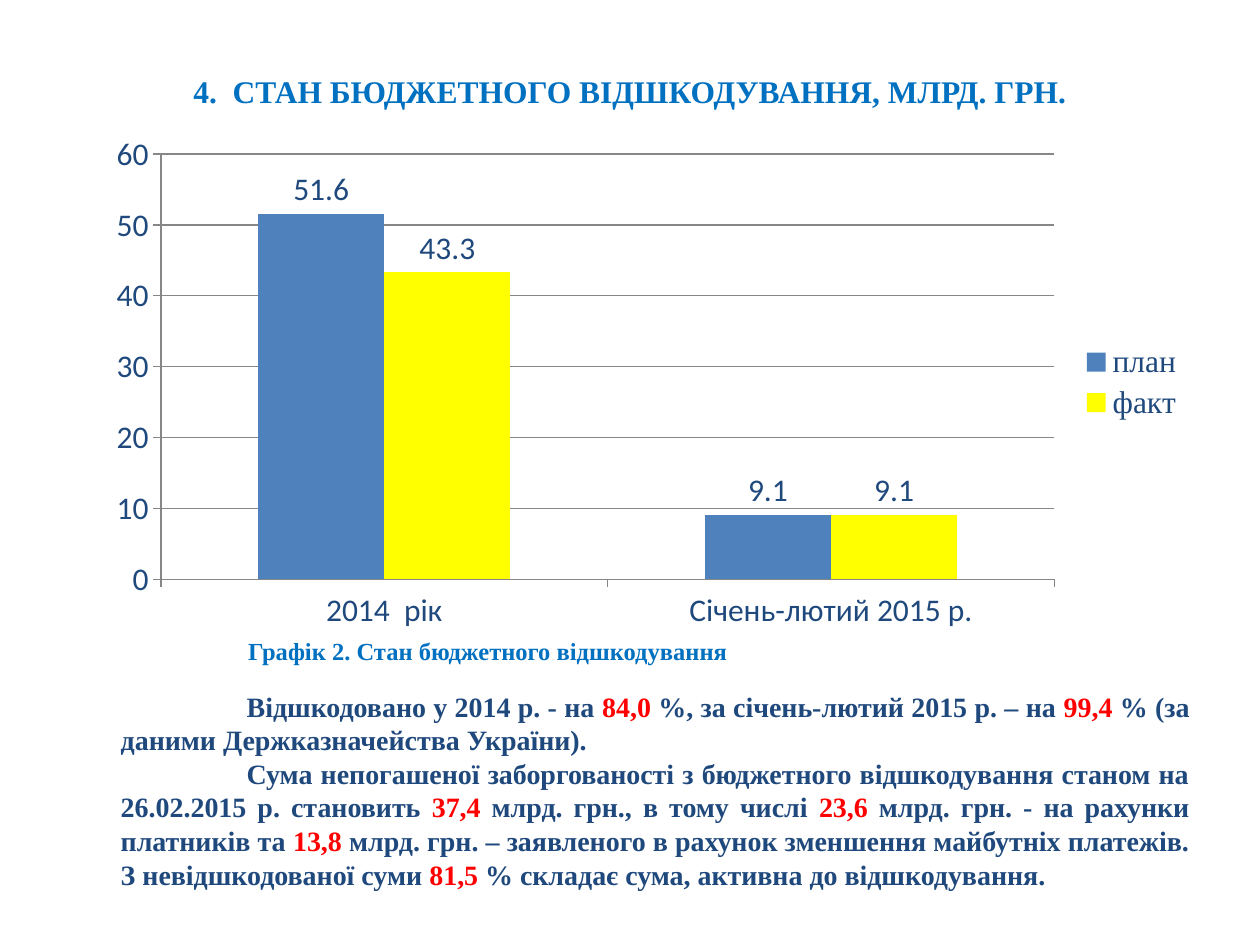
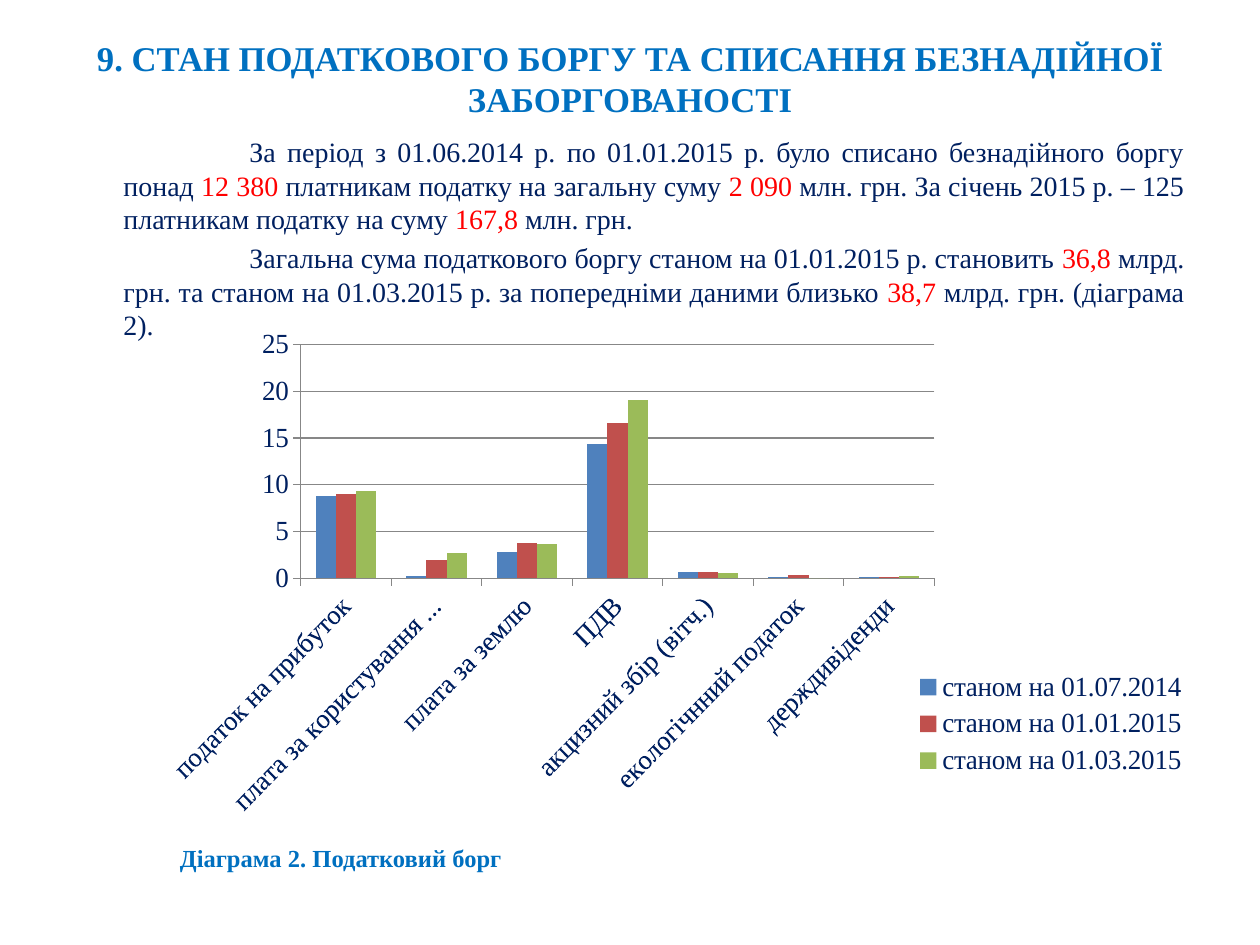
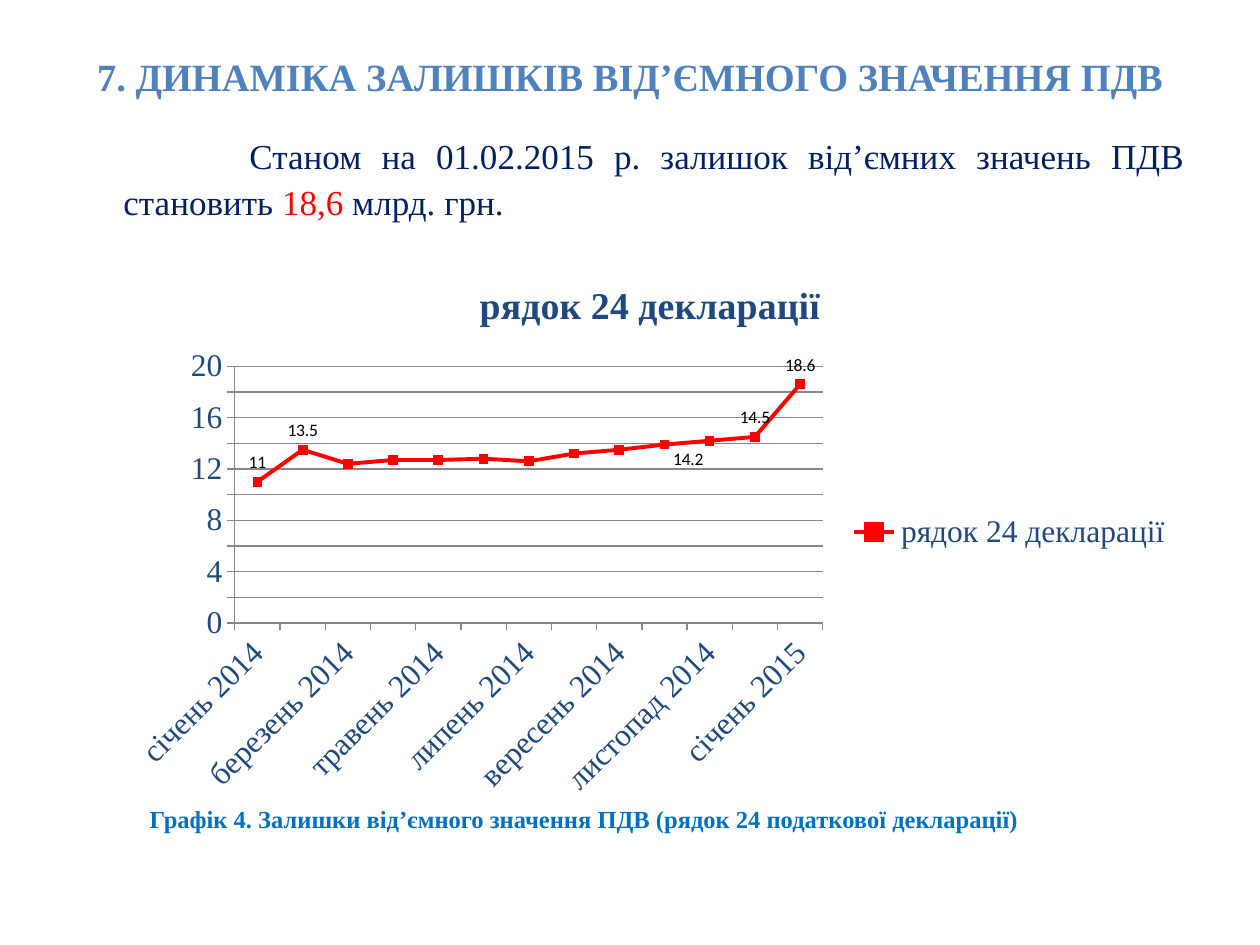
from dataclasses import dataclass

from lxml.etree import SubElement
from pptx import Presentation
from pptx.chart.data import CategoryChartData
from pptx.dml.color import RGBColor
from pptx.enum.chart import (XL_CHART_TYPE, XL_LABEL_POSITION, XL_LEGEND_POSITION,
                             XL_MARKER_STYLE, XL_TICK_MARK)
from pptx.enum.text import MSO_ANCHOR, MSO_AUTO_SIZE, PP_ALIGN
from pptx.oxml.ns import qn
from pptx.util import Inches, Pt


@dataclass(frozen=True)
class Theme:
    serif: str = "Times New Roman"
    sans: str = "Calibri"
    heading: str = "0070C0"
    navy: str = "1F497D"
    ink: str = "002060"
    accent: str = "FF0000"
    black: str = "000000"
    blue: str = "4F81BD"
    brick: str = "C0504D"
    green: str = "9BBB59"
    yellow: str = "FFFF00"
    grid: str = "878787"
    title_size: float = 18
    chart_title_size: float = 21.6
    chart_size: float = 18
    body_size: float = 16
    caption_size: float = 14
    label_size: float = 10


T = Theme()
COLUMNS, ROWS = 20, 15
TITLE_ONLY, TITLE_AND_BODY = 5, 1


def style(font, size=None, color=None, name=None, bold=None):
    if size:
        font.size = Pt(size)
    if color:
        font.color.rgb = RGBColor.from_string(color)
    if name:
        font.name = name
    if bold is not None:
        font.bold = bold


def add_run(p, text, **fmt):
    r = p.add_run()
    r.text = text
    style(r.font, **fmt)


def set_layout(parent, index, **values):
    """Give a chart part a manual layout as shares of the chart."""
    for old in parent.findall(qn("c:layout")):
        parent.remove(old)
    layout = SubElement(parent, qn("c:layout"))
    parent.insert(index, layout)
    manual = SubElement(layout, qn("c:manualLayout"))
    for tag, value in values.items():
        SubElement(manual, qn(f"c:{tag}")).set("val", str(value))


class Deck:
    def __init__(self):
        self.prs = Presentation()
        self.prs.slide_width, self.prs.slide_height = Inches(10), Inches(7.5)
        self.s = None

    def place(self, at):
        """Turn columns and rows into left, top, width, height."""
        col, row = self.prs.slide_width / COLUMNS, self.prs.slide_height / ROWS
        return [round(n * unit) for n, unit in zip(at, (col, row, col, row))]

    def move(self, sp, at):
        sp.left, sp.top, sp.width, sp.height = self.place(at)
        sp.text_frame.auto_size = MSO_AUTO_SIZE.NONE
        return sp.text_frame

    def slide(self, title, height, layout=TITLE_AND_BODY, size=T.title_size, color=T.heading):
        self.s = self.prs.slides.add_slide(self.prs.slide_layouts[layout])
        tf = self.move(self.s.shapes.title, (1, 0.6, 18, height))
        tf.vertical_anchor = MSO_ANCHOR.MIDDLE
        p = tf.paragraphs[0]
        p.alignment = PP_ALIGN.CENTER
        add_run(p, title, size=size, color=color, name=T.serif, bold=True)

    def textbox(self, at):
        tf = self.s.shapes.add_textbox(*self.place(at)).text_frame
        tf.word_wrap = True
        return tf

    def body(self, at):
        return self.move(self.s.placeholders[1], at)

    def prose(self, tf, paragraphs, margin=0.38, before=3, leading=None,
              size=T.body_size, color=T.ink, bold=False):
        """Write justified paragraphs; the parts between asterisks are accented."""
        for i, text in enumerate(paragraphs):
            p = tf.paragraphs[0] if i == 0 else tf.add_paragraph()
            p.alignment = PP_ALIGN.JUSTIFY
            p.space_before = Pt(before)
            if leading:
                p.line_spacing = Pt(leading)
            pPr = p._p.get_or_add_pPr()
            pPr.set("marL", str(Inches(margin)))
            pPr.set("indent", str(Inches(1)))
            SubElement(pPr, qn("a:buNone"))
            for j, part in enumerate(text.split("*")):
                add_run(p, part, size=size, color=T.accent if j % 2 else color,
                        name=T.serif, bold=bold)

    def caption(self, text, at):
        p = self.textbox(at).paragraphs[0]
        add_run(p, text, size=T.caption_size, color=T.heading, name=T.serif, bold=True)

    def chart(self, kind, at, cats, series, step, top, size=T.chart_size, color=T.navy,
              axis_font=T.serif, title=None):
        data = CategoryChartData()
        data.categories = cats
        for name, values in series.items():
            data.add_series(name, values)
        chart = self.s.shapes.add_chart(kind, *self.place(at), data).chart
        style(chart.font, T.chart_size, T.black, T.sans)
        chart.has_title = title is not None
        if title:
            add_run(chart.chart_title.text_frame.paragraphs[0], title,
                    size=T.chart_title_size, color=color, name=T.serif, bold=True)
        chart.has_legend = True
        chart.legend.position = XL_LEGEND_POSITION.RIGHT
        chart.legend.include_in_layout = False
        style(chart.legend.font, size, color, T.serif)
        for axis in (chart.category_axis, chart.value_axis):
            axis.major_tick_mark = XL_TICK_MARK.OUTSIDE
            style(axis.tick_labels.font, size, color, axis_font)
            self.hairline(axis.format.line)
        axis = chart.value_axis
        axis.minimum_scale, axis.maximum_scale, axis.major_unit = 0, top, step
        axis.has_major_gridlines = True
        self.hairline(axis.major_gridlines.format.line)
        chart.plots[0].vary_by_categories = False
        return chart

    def hairline(self, line):
        line.color.rgb = RGBColor.from_string(T.grid)
        line.width = Pt(0.75)

    def columns(self, *args, colors, gap=150, labels=None, **fmt):
        chart = self.chart(XL_CHART_TYPE.COLUMN_CLUSTERED, *args, **fmt)
        plot = chart.plots[0]
        plot.gap_width, plot.overlap = gap, 0
        for ser, color in zip(plot.series, colors):
            ser.format.fill.solid()
            ser.format.fill.fore_color.rgb = RGBColor.from_string(color)
            ser.invert_if_negative = False
            if labels:
                dl = ser.data_labels
                dl.show_value = True
                dl.number_format, dl.number_format_is_linked = labels, False
                dl.position = XL_LABEL_POSITION.OUTSIDE_END
                style(dl.font, T.chart_size, T.navy, T.sans)
        return chart

    def line(self, *args, color, labels, **fmt):
        chart = self.chart(XL_CHART_TYPE.LINE_MARKERS, *args, **fmt)
        ser = chart.plots[0].series[0]
        rgb = RGBColor.from_string(color)
        ser.smooth = False
        ser.format.line.color.rgb = rgb
        ser.format.line.width = Pt(2.25)
        ser.marker.style, ser.marker.size = XL_MARKER_STYLE.SQUARE, 5
        ser.marker.format.fill.solid()
        ser.marker.format.fill.fore_color.rgb = rgb
        ser.marker.format.line.color.rgb = rgb
        for i, position in labels.items():
            label = ser.points[i].data_label
            style(label.font, T.label_size, T.black)
            label.position = position
        return chart


def refund_slide(deck):
    deck.slide("4.  СТАН БЮДЖЕТНОГО ВІДШКОДУВАННЯ, МЛРД. ГРН.", 1.7, layout=TITLE_ONLY)
    deck.columns((1.5, 1.98, 17.5, 8.18), ["2014  рік", "Січень-лютий 2015 р."],
                 {"план": [51.6, 9.1], "факт": [43.3, 9.1]}, 10, 60,
                 colors=(T.blue, T.yellow), gap=154, labels="#,##0.0", axis_font=T.sans)
    deck.prose(deck.textbox((1.72, 10.84, 17.36, 3.5)), [
        "Відшкодовано у 2014 р. - на *84,0 *%, за січень-лютий 2015 р. – на *99,4* % "
        "(за даними Держказначейства України).",
        "Сума непогашеної заборгованості з бюджетного відшкодування станом на 26.02.2015 р. "
        "становить *37,4* млрд. грн., в тому числі *23,6* млрд. грн. - на рахунки платників "
        "та *13,8* млрд. грн. – заявленого в рахунок зменшення майбутніх платежів. "
        "З невідшкодованої суми *81,5* % складає сума, активна до відшкодування.",
    ], margin=0, before=0, color=T.navy, bold=True)
    deck.caption("Графік 2. Стан бюджетного відшкодування", (3.74, 10, 15.16, 0.68))


def debt_slide(deck):
    deck.slide("9. СТАН ПОДАТКОВОГО БОРГУ ТА СПИСАННЯ БЕЗНАДІЙНОЇ ЗАБОРГОВАНОСТІ", 1.28,
               size=19.8)
    deck.prose(deck.body((1, 2.04, 18, 12.04)), [
        "За період з 01.06.2014 р. по 01.01.2015 р. було списано безнадійного боргу понад "
        "*12 380 *платникам податку на загальну суму *2 090* млн. грн. За січень 2015 р. – "
        "125 платникам податку на суму *167,8* млн. грн.",
        "Загальна сума податкового боргу станом на 01.01.2015 р. становить *36,8 *млрд. грн. "
        "та станом на 01.03.2015 р. за попередніми даними близько *38,7 *млрд. грн. "
        "(діаграма 2).",
    ])
    taxes = ["податок на прибуток", "плата за користування надрами", "плата за землю", "ПДВ",
             "акцизний збір (вітч.)", "екологічнний податок", "держдивіденди"]
    chart = deck.columns((2.66, 5.16, 16.26, 7.8), taxes, {
        "станом на 01.07.2014": [8.8, 0.2, 2.8, 14.3, 0.7, 0.1, 0.1],
        "станом на 01.01.2015": [9, 1.9, 3.8, 16.6, 0.7, 0.3, 0.1],
        "станом на 01.03.2015": [9.3, 2.7, 3.7, 19.1, 0.6, 0, 0.2],
    }, 5, 25, colors=(T.blue, T.brick, T.green), size=T.body_size, color=T.ink)
    edges = dict(xMode="edge", yMode="edge")
    set_layout(chart._chartSpace.chart.plotArea, 0, layoutTarget="inner", **edges,
               x=0.1, y=0.04, w=0.64, h=0.48)
    set_layout(chart.legend._element, 1, **edges, x=0.72, y=0.7)
    deck.caption("Діаграма 2. Податковий борг", (2.66, 13.28, 15.94, 0.68))


def balance_slide(deck):
    deck.slide("7. ДИНАМІКА ЗАЛИШКІВ ВІД’ЄМНОГО ЗНАЧЕННЯ ПДВ", 1.22, size=22, color=T.blue)
    deck.prose(deck.body((1, 1.98, 18, 12.12)), [
        "Станом на 01.02.2015 р. залишок від’ємних значень ПДВ становить *18,6* млрд. грн.",
    ], size=20, before=21, leading=26)
    names = ["січень", "лютий", "березень", "квітень", "травень", "червень", "липень",
             "серпень", "вересень", "жовтень", "листопад", "грудень"]
    months = [f"{name} 2014" for name in names] + ["січень 2015"]
    row = "рядок 24 декларації"
    above, below = XL_LABEL_POSITION.ABOVE, XL_LABEL_POSITION.BELOW
    chart = deck.line((1.82, 4.06, 17, 8.76), months, {
        row: [11, 13.5, 12.4, 12.7, 12.7, 12.8, 12.6, 13.2, 13.5, 13.9, 14.2, 14.5, 18.6],
    }, 2, 20, title=row, color=T.accent,
        labels={0: above, 1: above, 10: below, 11: above, 12: above})
    for label in chart._chartSpace.iter(qn("c:dLbl")):
        if label.find(qn("c:idx")).get("val") == "10":
            set_layout(label, 1, x=-0.02, y=0)
    deck.caption("Графік 4. Залишки від’ємного значення ПДВ (рядок 24 податкової декларації)",
                 (2.18, 12.66, 16.4, 0.68))


def main():
    deck = Deck()
    for build in (refund_slide, debt_slide, balance_slide):
        build(deck)
    deck.prs.save("out.pptx")


if __name__ == "__main__":
    main()
